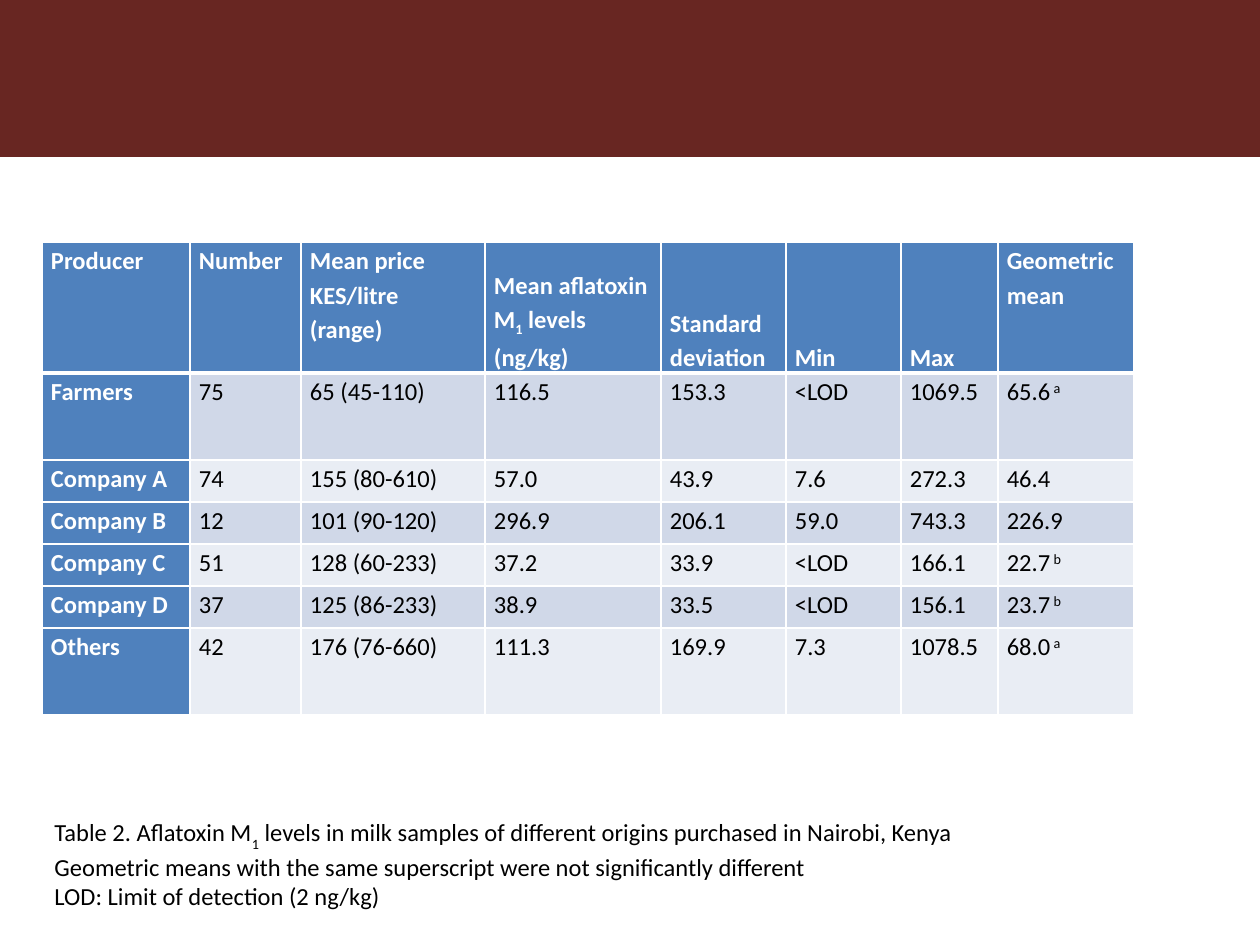
from lxml.etree import SubElement
from pptx import Presentation
from pptx.dml.color import RGBColor
from pptx.enum.shapes import MSO_SHAPE as Shape
from pptx.enum.text import MSO_ANCHOR as Anchor
from pptx.oxml.ns import qn
from pptx.util import Emu, Pt

SCALE = 914400 / 126
COLORS = {
    "band": "682622",
    "header": "4F81BD",
    "odd": "D0D8E8",
    "even": "E9EDF4",
    "white": "FFFFFF",
    "black": "000000",
}
COLUMN_WIDTHS = [148, 111, 184, 176, 125, 115, 97, 136]
ROW_HEIGHTS = [131, 87, 42, 42, 42, 42, 87]
BOTTOM_HEADERS = range(3, 7)
SAME_A, SAME_B = (" a", 30), (" b", 30)

AFLATOXIN_ROWS = [
    ["Producer", "Number", "Mean price KES/litre (range)",
     ["Mean aflatoxin M", ("1", -25), " levels (ng/kg)"],
     "Standard deviation", "Min", "Max", "Geometric mean"],
    ["Farmers", "75", "65 (45-110)", "116.5", "153.3", "<LOD", "1069.5", ["65.6", SAME_A]],
    ["Company A", "74", "155 (80-610)", "57.0", "43.9", "7.6", "272.3", "46.4"],
    ["Company B", "12", "101 (90-120)", "296.9", "206.1", "59.0", "743.3", "226.9"],
    ["Company C", "51", "128 (60-233)", "37.2", "33.9", "<LOD", "166.1", ["22.7", SAME_B]],
    ["Company D", "37", "125 (86-233)", "38.9", "33.5", "<LOD", "156.1", ["23.7", SAME_B]],
    ["Others", "42", "176 (76-660)", "111.3", "169.9", "7.3", "1078.5", ["68.0", SAME_A]],
]
CAPTION = [
    ["Table 2. Aflatoxin M", ("1", -30),
     " levels in milk samples of different origins purchased in Nairobi, Kenya"],
    "Geometric means with the same superscript were not significantly different",
    "LOD: Limit of detection (2 ng/kg)",
]


def px(length):
    return Emu(round(length * SCALE))


def apply(target, values):
    for name, value in values.items():
        setattr(target, name, value)


class SlideBuilder:
    font = {"name": "Calibri", "size": Pt(14)}
    cell_format = {"margin_left": px(9), "margin_right": px(9),
                   "margin_top": 0, "margin_bottom": 0}

    def __init__(self, slide):
        self.slide = slide

    def color(self, name):
        return RGBColor.from_string(COLORS[name])

    def fill(self, target, name):
        target.fill.solid()
        target.fill.fore_color.rgb = self.color(name)

    def add_wording(self, paragraph, content, color, bold=False):
        pieces = [content] if isinstance(content, str) else content
        for piece in pieces:
            wording, baseline = (piece, 0) if isinstance(piece, str) else piece
            run = paragraph.add_run()
            run.text = wording
            apply(run.font, {**self.font, "bold": bold})
            run.font.color.rgb = self.color(color)
            if baseline:
                run.font._element.set("baseline", str(baseline * 1000))

    def band(self, *box):
        band = self.slide.shapes.add_shape(Shape.RECTANGLE, *map(px, box))
        band.shadow.inherit = False
        self.fill(band, "band")
        band.line.fill.background()

    def borders(self, cell, widths):
        properties = cell._tc.get_or_add_tcPr()
        for side, width in widths.items():
            line = SubElement(properties, qn(f"a:ln{side}"), w=str(Pt(width)))
            solid = SubElement(line, qn("a:solidFill"))
            SubElement(solid, qn("a:srgbClr"), val=COLORS["white"])

    def table(self, left, top, rows):
        frame = self.slide.shapes.add_table(
            len(rows), len(COLUMN_WIDTHS), px(left), px(top),
            px(sum(COLUMN_WIDTHS)), px(sum(ROW_HEIGHTS)))
        table = frame.table
        for column, width in zip(table.columns, COLUMN_WIDTHS):
            column.width = px(width)
        for row, height in zip(table.rows, ROW_HEIGHTS):
            row.height = px(height)
        for r, contents in enumerate(rows):
            for c, content in enumerate(contents):
                self.cell(table.cell(r, c), r, c, content)

    def cell(self, cell, r, c, content):
        heading = r == 0 or c == 0
        at_bottom = r == 0 and c in BOTTOM_HEADERS
        apply(cell, {**self.cell_format,
                     "vertical_anchor": Anchor.BOTTOM if at_bottom else Anchor.TOP})
        self.borders(cell, {"L": 1, "R": 1, "T": 3 if r == 1 else 1, "B": 3 if r == 0 else 1})
        self.fill(cell, "header" if heading else "odd" if r % 2 else "even")
        paragraph = cell.text_frame.paragraphs[0]
        paragraph.line_spacing = 1.15
        self.add_wording(paragraph, content, "white" if heading else "black", heading)

    def caption(self, box, lines):
        frame = self.slide.shapes.add_textbox(*map(px, box)).text_frame
        apply(frame, {"word_wrap": True, "vertical_anchor": Anchor.MIDDLE})
        for i, line in enumerate(lines):
            paragraph = frame.add_paragraph() if i else frame.paragraphs[0]
            self.add_wording(paragraph, line, "black")


def main():
    deck = Presentation()
    apply(deck, {"slide_width": px(1260), "slide_height": px(945)})
    builder = SlideBuilder(deck.slides.add_slide(deck.slide_layouts[6]))
    builder.band(0, 0, 1260, 157)
    builder.table(42, 242, AFLATOXIN_ROWS)
    builder.caption((42, 813, 1092, 102), CAPTION)
    deck.save("out.pptx")


if __name__ == "__main__":
    main()
